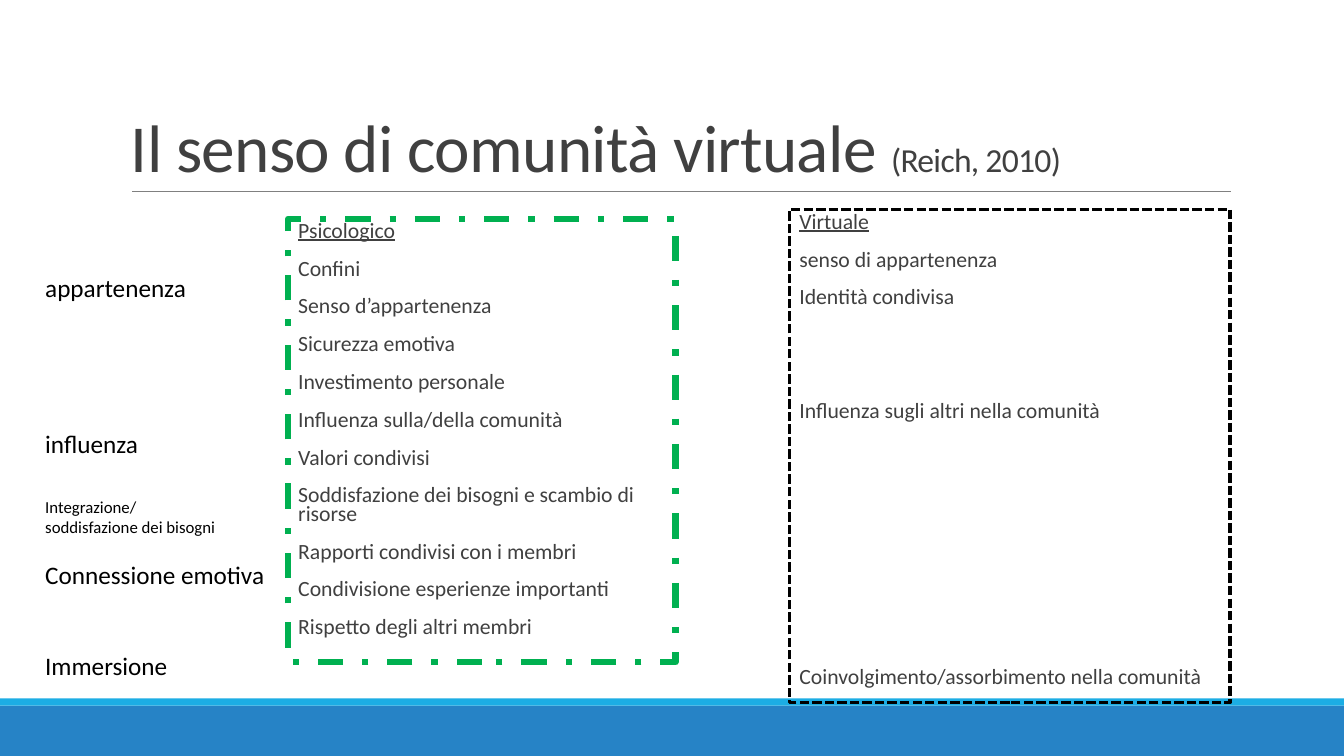
from lxml.etree import SubElement
from pptx import Presentation
from pptx.dml.color import RGBColor
from pptx.enum.dml import MSO_LINE
from pptx.enum.shapes import MSO_CONNECTOR, MSO_SHAPE
from pptx.enum.text import MSO_ANCHOR, MSO_AUTO_SIZE
from pptx.oxml.ns import qn
from pptx.util import Emu, Pt

PX = 9144  # EMU per px, 100 px to the inch
COLORS = {"band": "2683C6", "stripe": "1CADE4", "rule": "808080", "body": "404040",
          "label": "000000", "green": "00B050", "black": "000000"}

ROW = 27.1  # pitch of one list row, points
ROW_GAP = 12  # space before a list row, points


class Deck:
    font = "Calibri"

    def __init__(self, width, height):
        self.prs = Presentation()
        self.prs.slide_width, self.prs.slide_height = self.px(width, height)
        self.s = self.prs.slides.add_slide(self.prs.slide_layouts[6])

    def px(self, *lengths):
        return [Emu(n * PX) for n in lengths]

    def color(self, name):
        return RGBColor.from_string(COLORS[name])

    def style(self, r, size, color, underline=None):
        r.font.name = self.font
        r.font.size = Pt(size)
        r.font.color.rgb = self.color(color)
        r.font.underline = underline

    def bar(self, box, color):
        sp = self.s.shapes.add_shape(MSO_SHAPE.RECTANGLE, *self.px(*box))
        sp.shadow.inherit = False
        sp.fill.solid()
        sp.fill.fore_color.rgb = self.color(color)
        sp.line.fill.background()

    def rule(self, ends, color, width):
        line = self.s.shapes.add_connector(MSO_CONNECTOR.STRAIGHT, *self.px(*ends))
        line.line.color.rgb = self.color(color)
        line.line.width = Pt(width)
        SubElement(line._element.spPr, qn("a:effectLst"))

    def title(self, box, parts):
        tf = self.s.shapes.add_textbox(*self.px(*box)).text_frame
        tf.word_wrap = True
        tf.vertical_anchor = MSO_ANCHOR.BOTTOM
        p = tf.paragraphs[0]
        p.line_spacing = 0.85
        for text, size in parts:
            r = p.add_run()
            r.text = text
            self.style(r, size, "body")
            r.font._element.set("spc", "-50")

    def framed_list(self, box, items, color, width, dash):
        """Each item is (rows left empty above it, text); the first is the heading."""
        sp = self.s.shapes.add_textbox(*self.px(*box))
        sp.line.color.rgb = self.color(color)
        sp.line.width = Pt(width)
        sp.line.dash_style = dash
        tf = sp.text_frame
        tf.word_wrap = True
        tf.margin_right = 0
        tf.text = "\n".join(text for _, text in items)
        for i, (p, (skipped, _)) in enumerate(zip(tf.paragraphs, items)):
            p.line_spacing = 0.7
            p.space_before = Pt(ROW_GAP + skipped * ROW)
            p.space_after = Pt(2)
            self.style(p.runs[0], 15.5, "body", underline=i == 0)

    def label(self, box, lines, size, gap=0):
        tf = self.s.shapes.add_textbox(*self.px(*box)).text_frame
        tf.word_wrap = False
        tf.auto_size = MSO_AUTO_SIZE.SHAPE_TO_FIT_TEXT
        tf.text = "\n".join(lines)
        for i, p in enumerate(tf.paragraphs):
            p.space_before = Pt(gap if i else 0)
            self.style(p.runs[0], size, "label")


def main():
    deck = Deck(1333, 750)

    # Footer bands and title
    deck.bar((0, 700, 1333, 50), "band")
    deck.bar((0, 693, 1333, 7), "stripe")
    deck.rule((131, 190, 1221, 190), "rule", 0.5)
    deck.title((120, 31, 1100, 159),
               [("Il senso di comunità virtuale ", 48), ("(Reich, 2010)", 24)])

    # Psychological and virtual sense of community
    psychological = ["Psicologico", "Confini", "Senso d’appartenenza", "Sicurezza emotiva",
                     "Investimento personale", "Influenza sulla/della comunità",
                     "Valori condivisi", "Soddisfazione dei bisogni e scambio di risorse",
                     "Rapporti condivisi con i membri", "Condivisione esperienze importanti",
                     "Rispetto degli altri membri"]
    virtual = [(0, "Virtuale"), (0, "senso di appartenenza"), (0, "Identità condivisa"),
               (2, "Influenza sugli altri nella comunità"),
               (6, "Coinvolgimento/assorbimento nella comunità")]
    deck.framed_list((286, 217, 384, 440), [(0, text) for text in psychological],
                     "green", 4.5, MSO_LINE.DASH_DOT)
    deck.framed_list((783, 208, 437, 489), virtual, "black", 2.25, MSO_LINE.SQUARE_DOT)

    # Dimensions down the left side
    deck.label((35, 265, 161, 40), ["appartenenza"], 18)
    deck.label((35, 420, 114, 40), ["influenza"], 18)
    deck.label((35, 550, 240, 131), ["Connessione emotiva", "Immersione"], 18, gap=43)
    deck.label((35, 488, 191, 50), ["Integrazione/", "soddisfazione dei bisogni"], 12)

    deck.prs.save("out.pptx")


if __name__ == "__main__":
    main()
